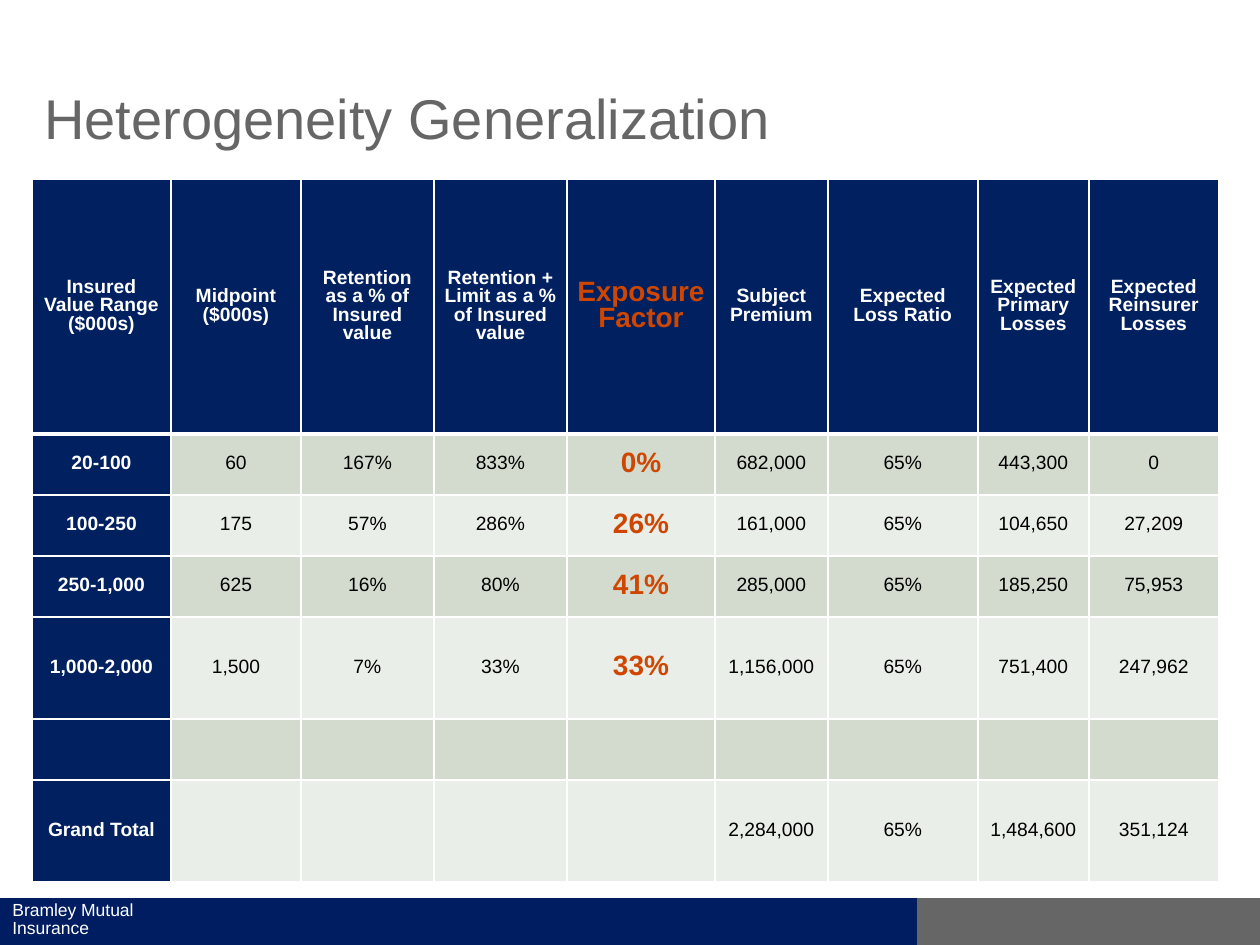
from lxml import etree
from pptx import Presentation, util as u
from pptx.dml.color import RGBColor
from pptx.enum import shapes, text
from pptx.oxml.ns import qn

PX_PER_INCH = 126
FONT = "Arial"
COLORS = {
    "white": "FFFFFF",
    "black": "000000",
    "gray": "666666",
    "bar": "001D61",
    "head": "002060",
    "accent": "CE4600",
    "odd": "D3DBCF",
    "even": "EAEEE8",
}
COLUMN_WIDTHS = [139, 130, 133, 133, 148, 113, 150, 111, 130]
ROW_HEIGHTS = [255, 61, 61, 61, 102, 61, 102]
FACTOR_COLUMN = 4
ROWS = [
    ["Insured Value Range ($000s)", "Midpoint ($000s)", "Retention as a % of Insured value",
     "Retention + Limit as a % of Insured value", "Exposure Factor", "Subject Premium",
     "Expected Loss Ratio", "Expected Primary Losses", "Expected Reinsurer Losses"],
    ["20-100", "60", "167%", "833%", "0%", "682,000", "65%", "443,300", "0"],
    ["100-250", "175", "57%", "286%", "26%", "161,000", "65%", "104,650", "27,209"],
    ["250-1,000", "625", "16%", "80%", "41%", "285,000", "65%", "185,250", "75,953"],
    ["1,000-2,000", "1,500", "7%", "33%", "33%", "1,156,000", "65%", "751,400", "247,962"],
    [""] * 9,
    ["Grand Total", "", "", "", "", "2,284,000", "65%", "1,484,600", "351,124"],
]


def px(length):
    return u.Emu(round(length * 914400 / PX_PER_INCH))


def color(name):
    return RGBColor.from_string(COLORS[name])


def write(frame, words, size, ink, bold=False, align=text.PP_ALIGN.LEFT, spacing=1.0):
    para = frame.paragraphs[0]
    para.alignment = align
    para.line_spacing = spacing
    span = para.add_run()
    span.text = words
    span.font.name = FONT
    span.font.size = u.Pt(size)
    span.font.bold = bold
    span.font.color.rgb = color(ink)


def add_text(page, box, words, **style):
    """Add a wrapped, vertically centred text box with side margins only."""
    frame = page.shapes.add_textbox(*map(px, box)).text_frame
    frame.word_wrap = True
    frame.vertical_anchor = text.MSO_ANCHOR.MIDDLE
    frame.margin_top = frame.margin_bottom = 0
    write(frame, words, **style)


def add_bar(page, box, fill):
    bar = page.shapes.add_shape(shapes.MSO_SHAPE.RECTANGLE, *map(px, box))
    bar.shadow.inherit = False
    bar.fill.solid()
    bar.fill.fore_color.rgb = color(fill)
    bar.line.fill.background()


def add_footer(page, box):
    left, top, width, height = box
    navy_width = 917
    add_bar(page, (left + navy_width, top, width - navy_width, height), "gray")
    add_bar(page, (left, top, navy_width, height), "bar")
    add_text(page, (left, top, 221, height - 2), "Bramley Mutual Insurance",
             size=10, ink="white", spacing=0.85)


def set_borders(cell, **widths):
    """Draw white cell borders; widths maps L, R, T and B, in that order, to points."""
    properties = cell._tc.get_or_add_tcPr()
    for side, width in widths.items():
        line = etree.SubElement(properties, qn(f"a:ln{side}"), w=str(u.Pt(width)))
        fill = etree.SubElement(line, qn("a:solidFill"))
        etree.SubElement(fill, qn("a:srgbClr"), val=COLORS["white"])


def format_cell(cell, words, row, column):
    heading = row == 0 or column == 0
    factor = column == FACTOR_COLUMN
    set_borders(cell, L=1, R=1, T=3 if row == 1 else 1, B=3 if row == 0 else 1)
    cell.fill.solid()
    cell.fill.fore_color.rgb = color("head" if heading else "odd" if row % 2 else "even")
    cell.vertical_anchor = text.MSO_ANCHOR.MIDDLE
    cell.margin_left = cell.margin_right = px(9)
    cell.margin_top = cell.margin_bottom = 0
    if words:
        write(cell.text_frame, words, size=16 if factor else 11,
              ink="accent" if factor else "white" if heading else "black",
              bold=heading or factor, align=text.PP_ALIGN.CENTER, spacing=0.85)


def add_exposure_table(page, left, top):
    box = left, top, sum(COLUMN_WIDTHS), sum(ROW_HEIGHTS)
    table = page.shapes.add_table(len(ROWS), len(COLUMN_WIDTHS), *map(px, box)).table
    table.first_row = table.horz_banding = False
    for column, width in zip(table.columns, COLUMN_WIDTHS):
        column.width = px(width)
    for row, height in zip(table.rows, ROW_HEIGHTS):
        row.height = px(height)
    for row, values in enumerate(ROWS):
        for column, words in enumerate(values):
            format_cell(table.cell(row, column), words, row, column)


def main():
    deck = Presentation()
    deck.slide_width, deck.slide_height = px(1260), px(945)
    page = deck.slides.add_slide(deck.slide_layouts[6])
    add_footer(page, (0, 898, 1260, 47))
    add_text(page, (32, 38, 1197, 158), "Heterogeneity Generalization", size=32, ink="gray")
    add_exposure_table(page, 32, 179)
    deck.save("out.pptx")


if __name__ == "__main__":
    main()
